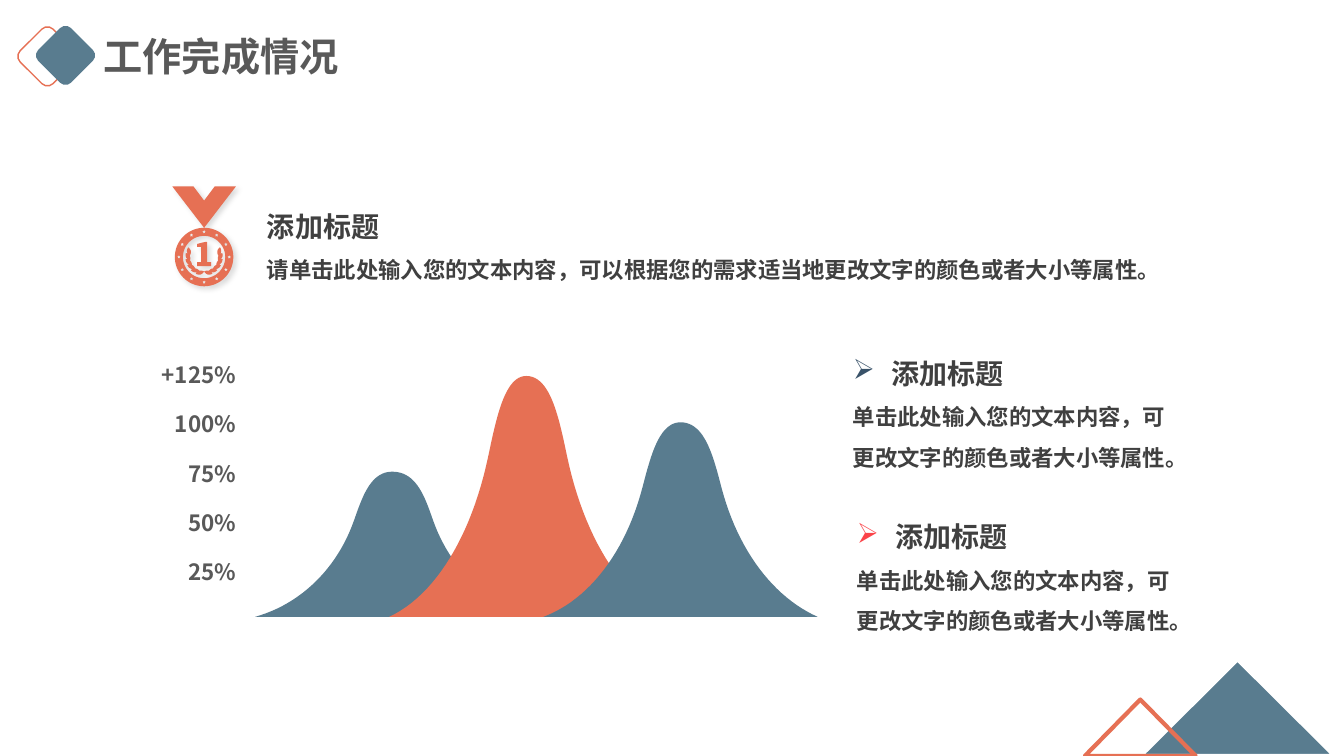
from math import cos, pi, radians, sin

from lxml import etree
from pptx import Presentation
from pptx.dml.color import RGBColor
from pptx.enum.shapes import MSO_SHAPE
from pptx.enum.text import MSO_ANCHOR, PP_ALIGN
from pptx.oxml.ns import qn
from pptx.util import Inches, Pt

ROUNDED = MSO_SHAPE.ROUNDED_RECTANGLE
TRIANGLE = MSO_SHAPE.ISOSCELES_TRIANGLE
LEFT, RIGHT, JUSTIFY = PP_ALIGN.LEFT, PP_ALIGN.RIGHT, PP_ALIGN.JUSTIFY
TOP, MIDDLE = MSO_ANCHOR.TOP, MSO_ANCHOR.MIDDLE

FONT = "Noto Sans CJK SC"
BLUE, ORANGE, WHITE = "597C8F", "E67054", "FFFFFF"
GREY, DARK = "595959", "404040"
WIDTH, HEIGHT = 13.33, 7.5

# Shares of a hill's width and height, measured from its lower left corner
HILL_CURVES = [
    [(0, 0), (0.17, 0.09), (0.3, 0.34), (0.36, 0.66)],
    [(0.36, 0.66), (0.39, 0.82), (0.42, 1), (0.5, 1)],
    [(0.5, 1), (0.59, 1), (0.62, 0.82), (0.65, 0.66)],
    [(0.65, 0.66), (0.71, 0.34), (0.84, 0.1), (1, 0)],
]
# Offsets from the medal's centre
DIGIT_ONE = [(0.01, -0.15), (0.03, -0.15), (0.03, 0.05), (0.07, 0.05), (0.07, 0.09),
             (-0.07, 0.09), (-0.07, 0.05), (-0.03, 0.05), (-0.03, -0.1), (-0.07, -0.1),
             (-0.07, -0.13), (-0.03, -0.14)]


def color(hex_string):
    return RGBColor.from_string(hex_string)


def paint(shape, fill=None, line=None, line_width=1):
    shape.shadow.inherit = False
    if fill:
        shape.fill.solid()
        shape.fill.fore_color.rgb = color(fill)
    else:
        shape.fill.background()
    if line:
        shape.line.color.rgb = color(line)
        shape.line.width = Pt(line_width)
    else:
        shape.line.fill.background()


def add_preset(slide, preset, box, **paints):
    shape = slide.shapes.add_shape(preset, *map(Inches, box))
    paint(shape, **paints)
    return shape


def add_outline(slide, contours, fill):
    """Draw closed contours, in inches, as one shape; inner contours become holes."""
    contours = [[(Inches(x), Inches(y)) for x, y in points] for points in contours]
    builder = slide.shapes.build_freeform(*contours[0][0], scale=1.0)
    for index, points in enumerate(contours):
        if index:
            builder.move_to(*points[0])
        builder.add_line_segments(points[1:], close=True)
    shape = builder.convert_to_shape()
    paint(shape, fill)
    return shape


def add_textbox(slide, box, lines, wrap=True, anchor=TOP, margin=None):
    """Each line is (text, size, colour, alignment, line spacing, bullet colour)."""
    frame = slide.shapes.add_textbox(*map(Inches, box)).text_frame
    frame.word_wrap = wrap
    frame.vertical_anchor = anchor
    if margin is not None:
        frame.margin_left = frame.margin_right = Inches(margin)
        frame.margin_top = frame.margin_bottom = Inches(margin)
    frame.text = "\n".join(line[0] for line in lines)
    for paragraph, line in zip(frame.paragraphs, lines):
        _, size, text_color, alignment, spacing, bullet_color = line
        paragraph.alignment = alignment
        paragraph.line_spacing = spacing
        if bullet_color:
            add_bullet(paragraph, bullet_color)
        run = paragraph.runs[0]
        run.font.size = Pt(size)
        run.font.bold = True
        run.font.color.rgb = color(text_color)
        run.font.name = FONT
        etree.SubElement(run.font._element, qn("a:ea"), typeface=FONT)


def add_bullet(paragraph, bullet_color):
    properties = paragraph._p.get_or_add_pPr()
    properties.set("marL", str(Inches(0.38)))
    properties.set("indent", str(Inches(-0.38)))
    tint = etree.SubElement(properties, qn("a:buClr"))
    etree.SubElement(tint, qn("a:srgbClr"), val=bullet_color)
    etree.SubElement(properties, qn("a:buChar"), char="➢")


def add_heading_and_body(slide, box, body, bullet_color=None):
    add_textbox(slide, box, [
        ("添加标题", 20, DARK, JUSTIFY, 1.5, bullet_color),
        (body, 16, DARK, LEFT, 1.5, None),
    ])


def add_header(slide, left, top):
    side = 0.46
    frame = add_preset(slide, ROUNDED, (left, top + 0.01, side, side), line=ORANGE)
    tile = add_preset(slide, ROUNDED, (left + 0.18, top, side, side), fill=BLUE)
    frame.rotation = tile.rotation = 45
    add_textbox(slide, (left + 0.69, top - 0.05, 2.56, 0.57),
                [("工作完成情况", 28, GREY, LEFT, 1, None)], wrap=False)


def polar(center, radius, degrees):
    angle = radians(degrees)
    return center[0] + radius * cos(angle), center[1] + radius * sin(angle)


def circle(center, radius):
    return [polar(center, radius, degrees) for degrees in range(0, 360, 5)]


def star(center, radius):
    return [polar(center, radius if point % 2 == 0 else radius / 2, 36 * point - 90)
            for point in range(10)]


def leaf(center, length, thickness, degrees):
    """A pointed oval whose long axis is turned by the given degrees."""
    turn = radians(degrees)
    points = []
    for step in range(16):
        angle = step * pi / 8
        along = length / 2 * cos(angle)
        across = thickness / 2 * sin(angle) * abs(sin(angle))
        points.append((center[0] + along * cos(turn) - across * sin(turn),
                       center[1] + along * sin(turn) + across * cos(turn)))
    return points


def add_medal(slide, left, top, width, height):
    radius = 0.29
    center_x, center_y = center = (left + width / 2, top + height - radius)
    ribbon = [(left, top), (left + width / 3, top), (center_x, top + 0.14),
              (left + width * 2 / 3, top), (left + width, top), (center_x, center_y - radius)]
    stars = [star(polar(center, 0.25, 30 * index), 0.02) for index in range(12)]
    wreath = []
    for index in range(6):
        angle = 75 - 19 * index
        right_leaf = leaf(polar(center, 0.16, angle), 0.085, 0.04, angle - 60)
        wreath += [right_leaf, [(2 * center_x - x, y) for x, y in right_leaf]]
    digit = [(center_x + x, center_y + y) for x, y in DIGIT_ONE]
    medal = add_outline(slide, [ribbon, circle(center, radius), circle(center, 0.21),
                                digit, *stars, *wreath], ORANGE)
    effects = medal._element.spPr.find(qn("a:effectLst"))
    shadow = etree.SubElement(effects, qn("a:outerShdw"), blurRad=str(Pt(4)), dist=str(Pt(3)),
                              dir=str(45 * 60000), algn="tl", rotWithShape="0")
    tint = etree.SubElement(shadow, qn("a:srgbClr"), val="000000")
    etree.SubElement(tint, qn("a:alpha"), val="15000")


def bezier(controls, steps=24):
    weights = (1, 3, 3, 1)
    for step in range(steps):
        t = step / steps
        shares = [w * t ** k * (1 - t) ** (3 - k) for k, w in enumerate(weights)]
        yield tuple(sum(s * point[axis] for s, point in zip(shares, controls)) for axis in (0, 1))


def add_hill_chart(slide, left, baseline):
    width = 2.72
    for offset, height, fill in [(0.96, 1.44, BLUE), (2.29, 2.39, ORANGE), (3.82, 1.93, BLUE)]:
        outline = [point for curve in HILL_CURVES for point in bezier(curve)] + [(1, 0)]
        add_outline(slide, [[(left + offset + width * x, baseline - height * y)
                             for x, y in outline]], fill)
    for row, label in enumerate(["+125%", "100%", "75%", "50%", "25%"]):
        add_textbox(slide, (left, baseline - 2.6 + 0.49 * row, 0.8, 0.39),
                    [(label, 16, GREY, RIGHT, 1, None)], anchor=MIDDLE, margin=0.03)


def add_corner_triangles(slide, bottom):
    add_preset(slide, TRIANGLE, (11.31, bottom - 0.96, 1.93, 0.96),
               fill=BLUE, line=WHITE, line_width=3)
    add_preset(slide, TRIANGLE, (10.76, bottom - 0.56, 1.1, 0.56), line=ORANGE, line_width=3)


def main():
    presentation = Presentation()
    presentation.slide_width, presentation.slide_height = Inches(WIDTH), Inches(HEIGHT)
    slide = presentation.slides.add_slide(presentation.slide_layouts[6])
    add_header(slide, 0.24, 0.32)
    add_heading_and_body(slide, (2.55, 1.86, 9.07, 1.41),
                         "请单击此处输入您的文本内容，可以根据您的需求适当地更改文字的颜色或者大小等属性。")
    add_medal(slide, 1.71, 1.85, 0.63, 0.99)
    add_hill_chart(slide, 1.57, 6.12)
    for left, top, bullet_color in [(8.36, 3.32, "395269"), (8.4, 4.94, "FB4349")]:
        add_heading_and_body(slide, (left, top, 3.38, 1.82),
                             "单击此处输入您的文本内容，可更改文字的颜色或者大小等属性。", bullet_color)
    add_corner_triangles(slide, HEIGHT)
    presentation.save("out.pptx")


if __name__ == "__main__":
    main()
